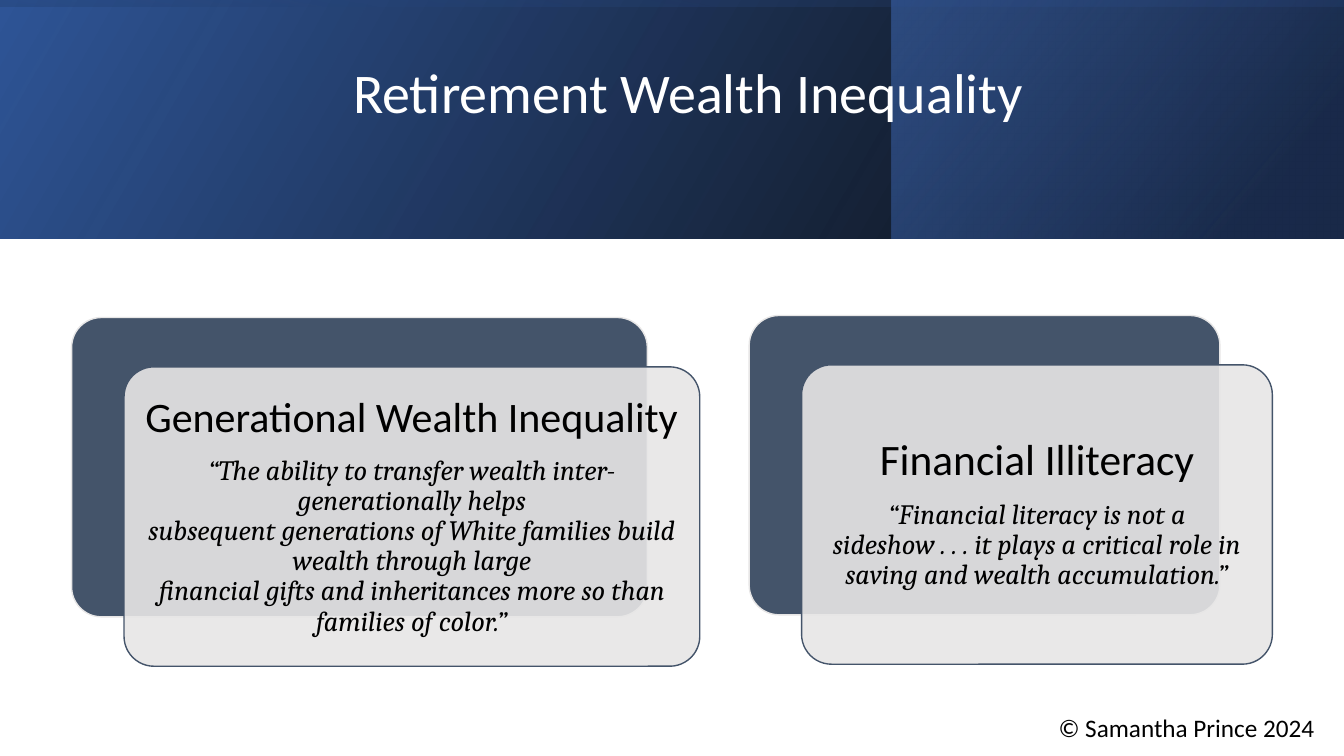
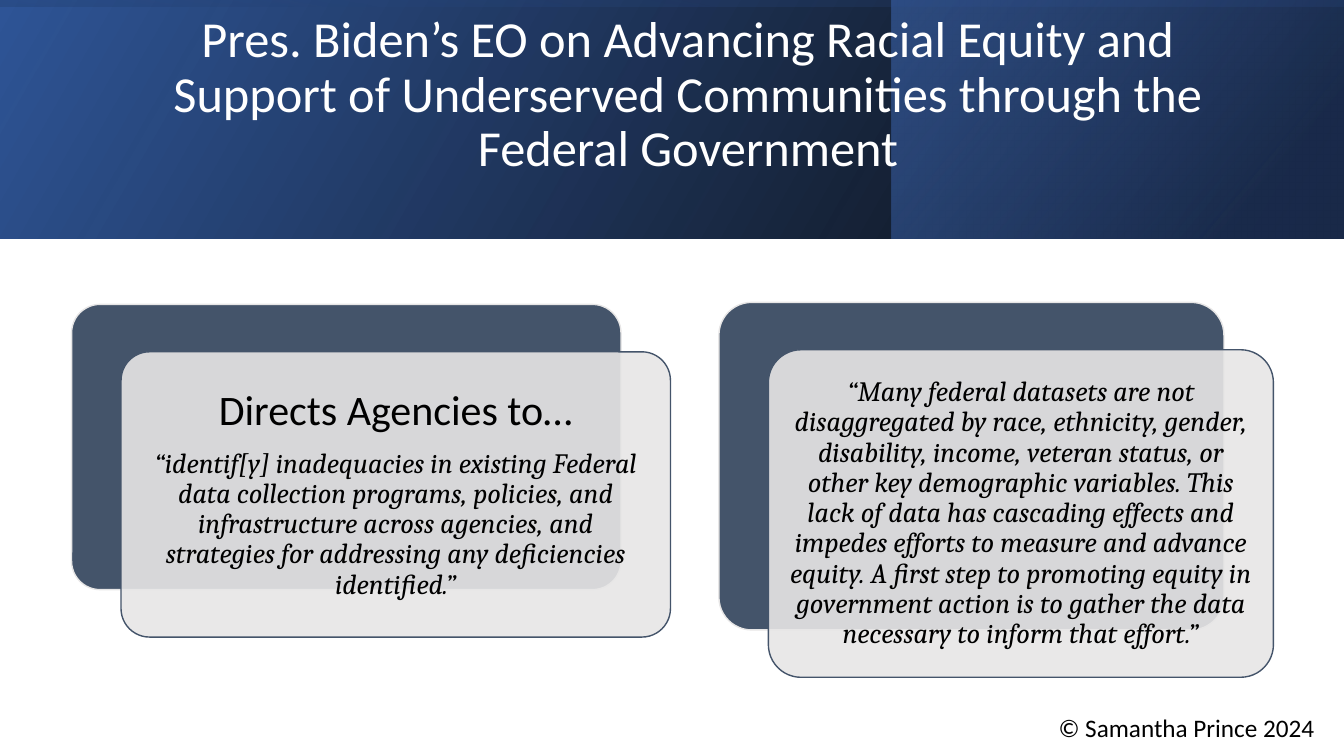
from dataclasses import dataclass

from lxml.etree import SubElement
from pptx import Presentation
from pptx.dml.color import RGBColor
from pptx.enum.shapes import MSO_SHAPE
from pptx.enum.text import MSO_ANCHOR, PP_ALIGN
from pptx.oxml.ns import qn
from pptx.util import Inches, Pt


@dataclass(frozen=True)
class Theme:
    white: str = "FFFFFF"
    black: str = "000000"
    slate: str = "44546A"
    pale: str = "E7E6E6"
    navy: str = "203864"
    blue: str = "2F5597"
    sky: str = "4472C4"
    sans: str = "Calibri"
    serif: str = "Cambria"
    quote: int = 20
    foot: int = 18


def fade(shape, *alphas):
    """Set the opacity, in percent, of the fill colours in turn."""
    for tint, alpha in zip(shape._element.spPr.iter(qn("a:srgbClr")), alphas):
        SubElement(tint, qn("a:alpha")).set("val", str(alpha * 1000))


class Deck:
    """Holds the style and the current slide; lengths are percent of its size."""

    def __init__(self, theme):
        self.theme = theme
        self.file = Presentation()
        self.file.slide_width = Inches(13.333)
        self.file.slide_height = Inches(7.5)

    def area(self, left, top, width, height):
        wide, high = self.file.slide_width, self.file.slide_height
        return (int(left * wide / 100), int(top * high / 100),
                int(width * wide / 100), int(height * high / 100))

    def font(self, para, size, face, tint, slant=False):
        for run in para.runs:
            run.font.size = Pt(size)
            run.font.name = face
            run.font.italic = slant
            run.font.color.rgb = RGBColor.from_string(tint)

    def slide(self, title, size):
        self.page = self.file.slides.add_slide(self.file.slide_layouts[5])
        self.bands()
        self.title(title, size)
        self.foot("© Samantha Prince 2024")

    def band(self, box, angle, *stops):
        """Draw a mirrored gradient band; a stop is (position, colour, opacity)."""
        shape = self.page.shapes.add_shape(MSO_SHAPE.RECTANGLE, *box)
        shape.shadow.inherit = False
        shape.line.fill.background()
        shape.fill.gradient()
        shape.fill.gradient_angle = angle
        for stop, (place, tint, _) in zip(shape.fill.gradient_stops, stops):
            stop.color.rgb = RGBColor.from_string(tint)
            stop.position = place / 100
        fade(shape, *(alpha for _, _, alpha in stops))
        shape._element.spPr.xfrm.set("flipH", "1")
        return shape

    def bands(self):
        look = self.theme
        full = self.area(0, 0, 100, 31.6)
        self.band(full, 30, (0, look.black, 96), (100, look.blue, 100))
        self.band(self.area(66.32, 0, 33.62, 31.6), 40,
                  (19, look.navy, 68), (100, look.sky, 48))
        wide, high = full[2:]
        shift = (wide - high) // 2
        veil = self.band((shift, -shift, high, wide), 10,
                         (23, look.blue, 16), (99, look.black, 45))
        veil.rotation = 270

    def title(self, text, size):
        title = self.page.shapes.title
        self.page.shapes._spTree.append(title._element)
        title.left, title.top, title.width, title.height = self.area(
            11.33, 1.33, 79.74, 22.67)
        frame = title.text_frame
        frame.text = text
        frame.word_wrap = True
        frame.vertical_anchor = MSO_ANCHOR.MIDDLE
        frame.margin_top = frame.margin_bottom = 0
        para = frame.paragraphs[0]
        para.alignment = PP_ALIGN.CENTER
        para.line_spacing = 0.9
        self.font(para, size, self.theme.sans, self.theme.white)

    def foot(self, text):
        box = self.page.shapes.add_textbox(*self.area(78.02, 93.5, 21.9, 5.33))
        box.text_frame.word_wrap = True
        box.text_frame.text = text
        self.font(box.text_frame.paragraphs[0], self.theme.foot,
                  self.theme.sans, self.theme.black)

    def panel(self, group, box, fill, line):
        shape = group.shapes.add_shape(MSO_SHAPE.ROUNDED_RECTANGLE,
                                       *self.area(*box))
        shape.adjustments[0] = 0.1
        shape.shadow.inherit = False
        shape.fill.solid()
        shape.fill.fore_color.rgb = RGBColor.from_string(fill)
        shape.line.color.rgb = RGBColor.from_string(line)
        shape.line.width = Pt(1)
        return shape

    def card(self, box, shift, quote, head=None, size=30, inset=0.12):
        """Draw a dark panel with a shifted, see-through text panel over it."""
        look = self.theme
        left, top, width, height = box
        group = self.page.shapes.add_group_shape()
        self.panel(group, box, look.slate, look.pale)
        front = self.panel(
            group, (left + shift[0], top + shift[1], width, height),
            look.pale, look.slate)
        fade(front, 90)
        frame = front.text_frame
        frame.word_wrap = True
        frame.vertical_anchor = MSO_ANCHOR.MIDDLE
        frame.margin_left = frame.margin_right = Inches(inset)
        frame.margin_top = frame.margin_bottom = Inches(inset)
        frame.text = f"{head}\n{quote}" if head else quote
        for para in frame.paragraphs:
            para.alignment = PP_ALIGN.CENTER
            para.line_spacing = 0.9
        *heads, body = frame.paragraphs
        for para in heads:
            para.space_after = Pt(size * 0.35)
            self.font(para, size, look.sans, look.black)
        body.space_after = Pt(look.quote * 0.35)
        self.font(body, look.quote, look.serif, look.black, True)


def main():
    deck = Deck(Theme())

    deck.slide("Retirement Wealth Inequality", 40)
    shift = (3.9, 6.53)
    deck.card((5.33, 42, 42.84, 39.6), shift,
              "“The ability to transfer wealth inter-generationally helps\v"
              "subsequent generations of White families build wealth "
              "through large\vfinancial gifts and inheritances more so than "
              "families of color.”", "Generational Wealth Inequality")
    deck.card((55.74, 41.73, 35.03, 39.6), shift,
              "“Financial literacy is not a sideshow . . . it plays a "
              "critical role in saving and wealth accumulation.”",
              "Financial Illiteracy", size=31, inset=0.13)

    deck.slide("Pres. Biden’s EO on Advancing Racial Equity and Support of "
               "Underserved Communities through the Federal Government", 36)
    shift = (3.68, 6.27)
    deck.card((5.33, 40.27, 40.88, 37.73), shift,
              "“identif[y] inadequacies in existing Federal data collection "
              "programs, policies, and infrastructure across agencies, and "
              "strategies for addressing any deficiencies identified.”",
              "Directs Agencies to…")
    deck.card((53.49, 40, 37.58, 43.33), shift,
              "“Many federal datasets are not disaggregated by race, "
              "ethnicity, gender, disability, income, veteran status, or "
              "other key demographic variables. This lack of data has "
              "cascading effects and impedes efforts to measure and advance "
              "equity. A first step to promoting equity in government action "
              "is to gather the data necessary to inform that effort.”",
              inset=0.08)

    deck.file.save("out.pptx")


if __name__ == "__main__":
    main()
